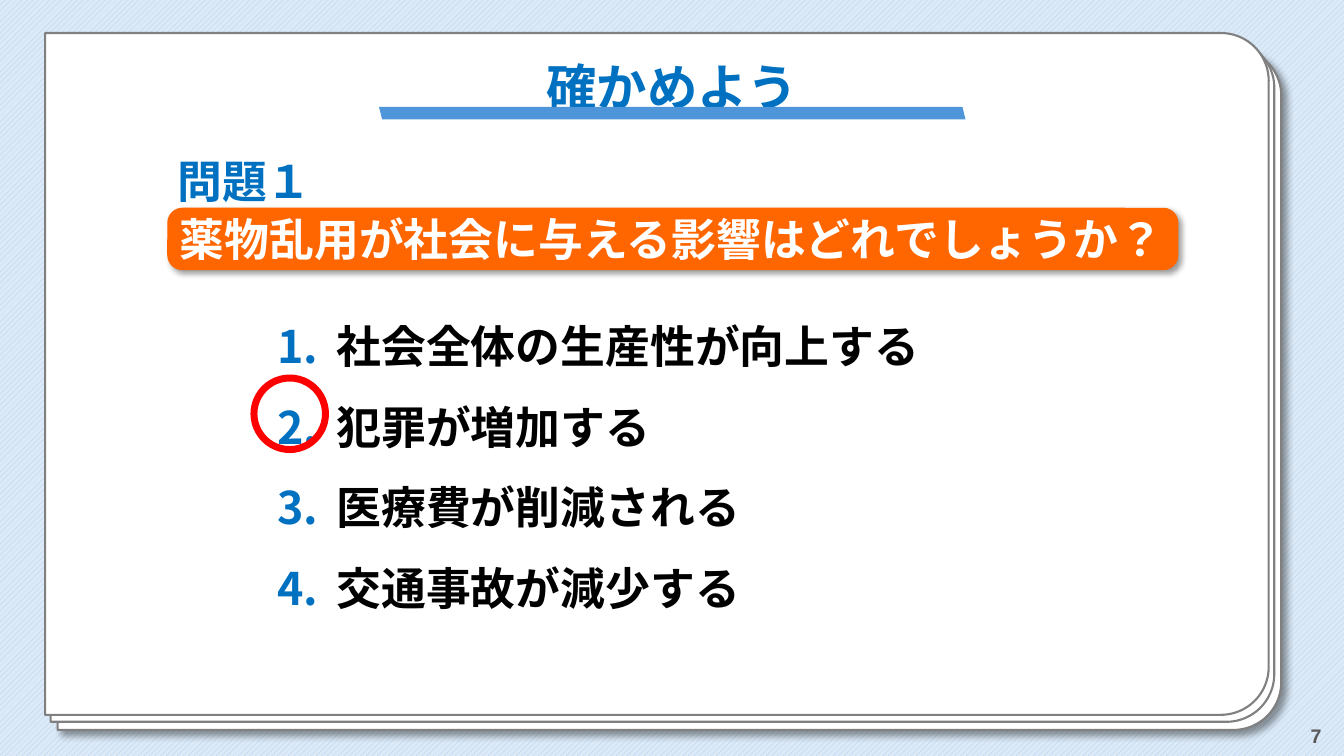
from lxml import etree
from pptx import Presentation
from pptx.dml.color import RGBColor
from pptx.enum.dml import MSO_PATTERN
from pptx.enum.shapes import MSO_SHAPE
from pptx.enum.text import MSO_ANCHOR, MSO_AUTO_SIZE, PP_ALIGN
from pptx.oxml.ns import qn
from pptx.util import Pt

TITLE = "確かめよう"
HEADING = "問題１"
QUESTION = "薬物乱用が社会に与える影響はどれでしょうか？"
CHOICES = [
    "社会全体の生産性が向上する",
    "犯罪が増加する",
    "医療費が削減される",
    "交通事故が減少する",
]
PAGE_NUMBER = "7"

COLORS = {
    "stripe": "A6CAEC",
    "backdrop": "DCEAF7",
    "white": "FFFFFF",
    "edge": "808080",
    "blue": "0070C0",
    "underline": "4E95D9",
    "orange": "FF6600",
    "red": "FF0000",
    "black": "000000",
    "gray": "595959",
}
LATIN = "Arial"
JAPANESE = "Noto Sans CJK JP"

CARD_WIDTH, CARD_HEIGHT = 874, 487
CARD_CORNERS = [(41.2, 34.4), (36.2, 28.6), (32.2, 23.6)]
TITLE_BOX = (270.7, 23.8, 419, 61.2)
UNDERLINE_BOX = (270.7, 76.3, 419, 9)
HEADING_BOX = (119.5, 107.3, 111.6, 42.5)
QUESTION_BOX = (119.5, 148.4, 722.2, 44.6)
CHOICES_BOX = (120.2, 194.4, 718.6, 250)
ANSWER_RING = (181.4, 270, 51.1, 51.1)
NUMBER_BOX = (735.1, 511.2, 216, 28.8)

LEFT, CENTER, RIGHT = PP_ALIGN.LEFT, PP_ALIGN.CENTER, PP_ALIGN.RIGHT
TOP, MIDDLE, BOTTOM = MSO_ANCHOR.TOP, MSO_ANCHOR.MIDDLE, MSO_ANCHOR.BOTTOM


def rgb(name):
    return RGBColor.from_string(COLORS[name])


def place(shape, box):
    for name, value in zip(("left", "top", "width", "height"), box):
        setattr(shape, name, Pt(value))


def write(shape, lines, size, color, anchor, insets, wrap=True, latin=LATIN, **paragraph_format):
    frame = shape.text_frame
    margins = zip(("margin_left", "margin_top", "margin_right", "margin_bottom"), map(Pt, insets))
    frame_format = {
        "auto_size": MSO_AUTO_SIZE.NONE,
        "word_wrap": wrap,
        "vertical_anchor": anchor,
        **dict(margins),
    }
    for name, value in frame_format.items():
        setattr(frame, name, value)
    for index, line in enumerate(lines):
        paragraph = frame.add_paragraph() if index else frame.paragraphs[0]
        for name, value in {"space_before": Pt(0), **paragraph_format}.items():
            setattr(paragraph, name, value)
        run = paragraph.add_run()
        run.text = line
        for name, value in {"size": Pt(size), "bold": True, "name": latin}.items():
            setattr(run.font, name, value)
        run.font.color.rgb = rgb(color)
        properties = run.font._element if hasattr(run.font, "_element") else run._r.get_or_add_rPr()
        properties.set("lang", "ja-JP")
        etree.SubElement(properties, qn("a:ea"), typeface=JAPANESE)


def add_figure(slide, preset, box, fill=None, line=None, line_width=0, adjustments=()):
    shape = slide.shapes.add_shape(preset, *map(Pt, box))
    shape.shadow.inherit = False
    if fill:
        shape.fill.solid()
        shape.fill.fore_color.rgb = rgb(fill)
    else:
        shape.fill.background()
    if line:
        shape.line.color.rgb = rgb(line)
        shape.line.width = Pt(line_width)
    else:
        shape.line.fill.background()
    for index, value in enumerate(adjustments):
        shape.adjustments[index] = value
    return shape


def add_shadow(shape, distance):
    effects = shape.element.spPr.find(qn("a:effectLst"))
    shadow = etree.SubElement(
        effects, qn("a:outerShdw"), blurRad=str(Pt(4)), dist=str(Pt(distance)),
        dir="2700000", algn="tl", rotWithShape="0")
    color = etree.SubElement(shadow, qn("a:srgbClr"), val=COLORS["black"])
    etree.SubElement(color, qn("a:alpha"), val="40000")


def number_paragraph(paragraph):
    properties = paragraph._p.get_or_add_pPr()
    properties.set("marL", str(Pt(113)))
    properties.set("indent", str(-Pt(42.5)))
    color = etree.SubElement(properties, qn("a:buClr"))
    etree.SubElement(color, qn("a:srgbClr"), val=COLORS["blue"])
    etree.SubElement(properties, qn("a:buFont"), typeface=JAPANESE)
    etree.SubElement(properties, qn("a:buAutoNum"), type="arabicPeriod")


def add_cards(slide):
    for index, (left, top) in enumerate(CARD_CORNERS):
        offset = (CARD_WIDTH - CARD_HEIGHT) / 2
        box = (left + offset, top - offset, CARD_HEIGHT, CARD_WIDTH)
        card = add_figure(slide, MSO_SHAPE.ROUND_2_SAME_RECTANGLE, box,
                          "white", "edge", 1.5, (0.07, 0))
        card.rotation = 90
        if index == 0:
            add_shadow(card, 5)
        slide.shapes.title.element.addprevious(card.element)


def main():
    presentation = Presentation()
    presentation.slide_width, presentation.slide_height = Pt(960), Pt(540)
    slide = presentation.slides.add_slide(presentation.slide_layouts[1])
    background = slide.background.fill
    background.patterned()
    background.pattern = MSO_PATTERN.WIDE_UPWARD_DIAGONAL
    background.fore_color.rgb = rgb("stripe")
    background.back_color.rgb = rgb("backdrop")

    add_cards(slide)

    title = slide.shapes.title
    place(title, TITLE_BOX)
    write(title, [TITLE], 36, "blue", BOTTOM, (7.2, 3.6, 7.2, 1),
          alignment=CENTER, line_spacing=0.9)

    choices = slide.placeholders[1]
    place(choices, CHOICES_BOX)
    write(choices, CHOICES, 32, "black", TOP, (7.2, 14, 7.2, 3.6),
          alignment=LEFT, line_spacing=Pt(57.6))
    for paragraph in choices.text_frame.paragraphs:
        number_paragraph(paragraph)

    page_number = slide.shapes.add_textbox(*map(Pt, NUMBER_BOX))
    write(page_number, [PAGE_NUMBER], 14, "gray", MIDDLE, (7.2, 3.6, 7.2, 3.6), alignment=RIGHT)

    question = add_figure(slide, MSO_SHAPE.ROUNDED_RECTANGLE, QUESTION_BOX,
                          "orange", adjustments=(0.24,))
    add_shadow(question, 3)
    write(question, [QUESTION], 32, "white", MIDDLE, (5.8, 0, 5.8, 0), wrap=False, alignment=LEFT)

    heading = slide.shapes.add_textbox(*map(Pt, HEADING_BOX))
    write(heading, [HEADING], 32, "blue", BOTTOM, (7.2, 3.6, 7.2, 1), wrap=False,
          latin=JAPANESE, alignment=LEFT, line_spacing=0.9)

    underline = add_figure(slide, MSO_SHAPE.PARALLELOGRAM, UNDERLINE_BOX, "underline")
    underline.element.spPr.find(qn("a:xfrm")).set("flipH", "1")

    add_figure(slide, MSO_SHAPE.OVAL, ANSWER_RING, line="red", line_width=5)

    presentation.save("out.pptx")


if __name__ == "__main__":
    main()
